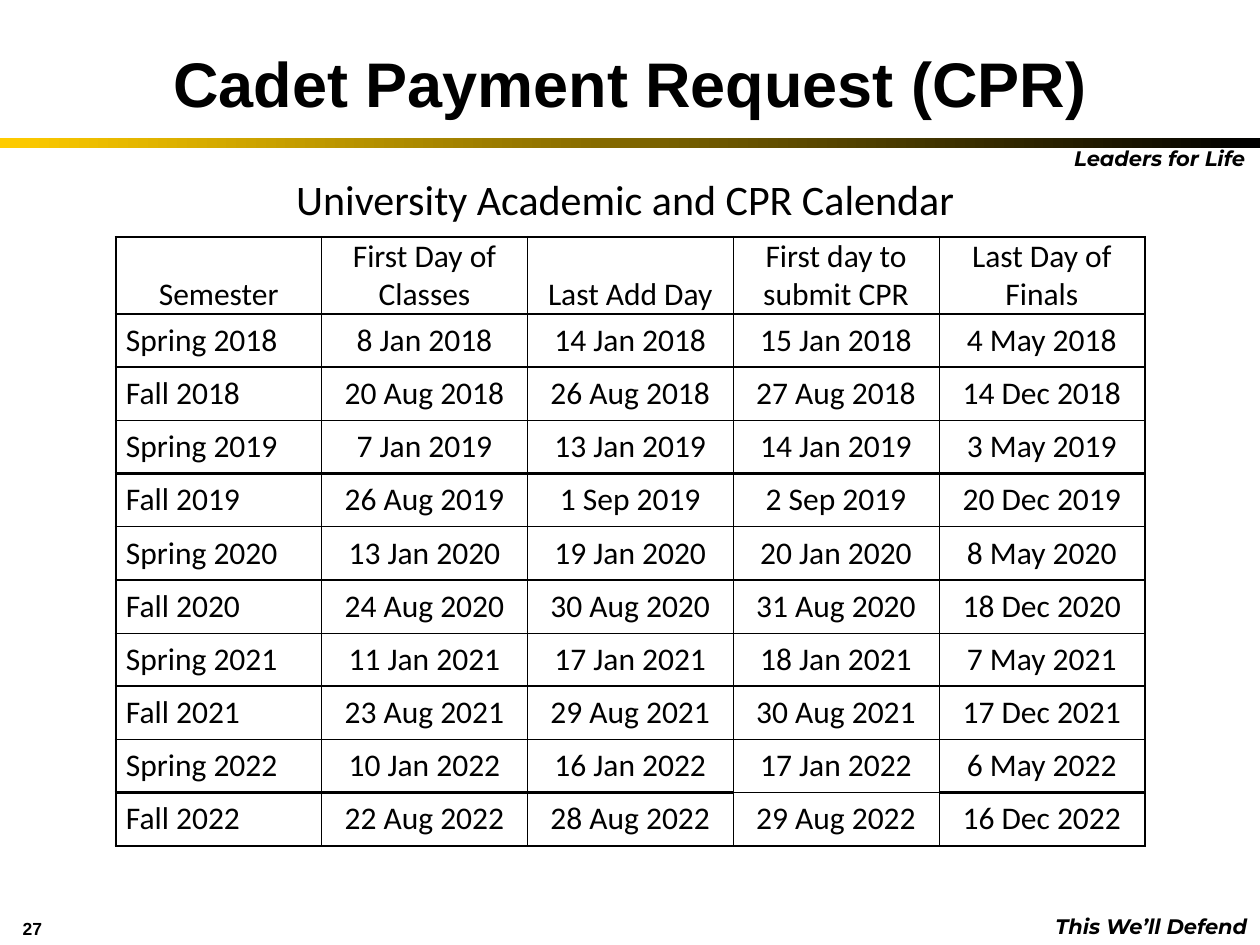
from dataclasses import dataclass

from lxml.etree import SubElement
from pptx import Presentation
from pptx.dml.color import RGBColor as RGB
from pptx.enum.shapes import MSO_SHAPE as Shape
from pptx.enum.text import MSO_ANCHOR as Anchor, MSO_AUTO_SIZE as AutoSize, PP_ALIGN as Align
from pptx.oxml.ns import qn
from pptx.util import Pt


@dataclass(frozen=True)
class Theme:
    ink: RGB = RGB(0, 0, 0)
    gold: RGB = RGB(0xFF, 0xCC, 0x00)
    amber: RGB = RGB(0xFF, 0xC0, 0x00)
    heading: str = "Arial"
    body: str = "Calibri"
    motto: str = "Montserrat"
    title_size: float = 36
    subtitle_size: float = 24
    table_size: float = 18
    motto_size: float = 12
    number_size: float = 10
    thick: float = 1.5
    thin: float = 0.5
    outline: float = 0.75


@dataclass(frozen=True)
class Style:
    font: str
    size: float
    bold: bool = False
    italic: bool = False
    outline: RGB | None = None


@dataclass(frozen=True)
class Label:
    text: str
    box: tuple[float, float, float, float]
    style: Style
    align: Align = Align.LEFT
    anchor: Anchor = Anchor.TOP
    wrap: bool = True


THEME = Theme()
TABLE_STYLE = Style(THEME.body, THEME.table_size)
TITLE = Label("Cadet Payment Request (CPR)", (36, 21.6, 648, 50.4),
              Style(THEME.heading, THEME.title_size, True), Align.CENTER, Anchor.MIDDLE)
LABELS = [
    Label("27", (5.8, 516.2, 66.2, 23.8),
          Style(THEME.heading, THEME.number_size, True), anchor=Anchor.BOTTOM),
    Label("This We’ll Defend", (591.1, 518.4, 128.9, 21.6),
          Style(THEME.motto, THEME.motto_size, True, True, THEME.amber), Align.RIGHT, wrap=False),
    Label("Leaders for Life", (599.8, 79.9, 118.8, 21.6),
          Style(THEME.motto, THEME.motto_size, True, True, THEME.gold), Align.RIGHT, wrap=False),
    Label("University Academic and CPR Calendar ", (72, 95.8, 576, 36),
          Style(THEME.body, THEME.subtitle_size), Align.CENTER),
]
CALENDAR = [
    ("Semester", "First Day of Classes", "Last Add Day", "First day to submit CPR",
     "Last Day of Finals"),
    ("Spring 2018", "8 Jan 2018", "14 Jan 2018", "15 Jan 2018", "4 May 2018"),
    ("Fall 2018", "20 Aug 2018", "26 Aug 2018", "27 Aug 2018", "14 Dec 2018"),
    ("Spring 2019", "7 Jan 2019", "13 Jan 2019", "14 Jan 2019", "3 May 2019"),
    ("Fall 2019", "26 Aug 2019", "1 Sep 2019", "2 Sep 2019", "20 Dec 2019"),
    ("Spring 2020", "13 Jan 2020", "19 Jan 2020", "20 Jan 2020", "8 May 2020"),
    ("Fall 2020", "24 Aug 2020", "30 Aug 2020", "31 Aug 2020", "18 Dec 2020"),
    ("Spring 2021", "11 Jan 2021", "17 Jan 2021", "18 Jan 2021", "7 May 2021"),
    ("Fall 2021", "23 Aug 2021", "29 Aug 2021", "30 Aug 2021", "17 Dec 2021"),
    ("Spring 2022", "10 Jan 2022", "16 Jan 2022", "17 Jan 2022", "6 May 2022"),
    ("Fall 2022", "22 Aug 2022", "28 Aug 2022", "29 Aug 2022", "16 Dec 2022"),
]
TABLE_LEFT, TABLE_TOP = 66.2, 135.4
COLUMN_WIDTH, HEADER_HEIGHT, ROW_HEIGHT = 117.6, 38.2, 30.4
SEMESTER_INSET = 5.8


def add_line(parent, tag: str, width: float, color: RGB, index: int) -> None:
    ln = SubElement(parent, qn(tag), w=str(Pt(width)))
    parent.insert(index, ln)
    SubElement(SubElement(ln, qn("a:solidFill")), qn("a:srgbClr"), val=str(color))


def write(tf, text: str, style: Style, align: Align) -> None:
    p = tf.paragraphs[0]
    p.alignment = align
    r = p.add_run()
    r.text = text
    r.font.name, r.font.size = style.font, Pt(style.size)
    r.font.bold, r.font.italic = style.bold, style.italic
    r.font.color.rgb = THEME.ink
    if style.outline is not None:
        add_line(r.font._element, "a:ln", THEME.outline, style.outline, 0)


def fill_label(sp, label: Label) -> None:
    sp.left, sp.top, sp.width, sp.height = map(Pt, label.box)
    tf = sp.text_frame
    tf.auto_size = AutoSize.NONE
    tf.word_wrap = label.wrap
    tf.vertical_anchor = label.anchor
    write(tf, label.text, label.style, label.align)


def add_band(s) -> None:
    sp = s.shapes.add_shape(Shape.RECTANGLE, 0, Pt(78.8), Pt(720), Pt(5.8))
    sp.rotation = 180
    sp.shadow.inherit = False
    sp.line.fill.background()
    sp.fill.gradient()
    sp.fill.gradient_angle = 0
    for stop, position, color in zip(sp.fill.gradient_stops, (0, 1), (THEME.ink, THEME.gold)):
        stop.position = position
        stop.color.rgb = color


def rule_width(line: int, column: int) -> float:
    last = len(CALENDAR)
    between_years = line % 2 == 1 and 1 < line < last
    lighter_gap = (line, column) == (last - 1, 3)
    return THEME.thin if between_years or lighter_gap else THEME.thick


def side_width(line: int) -> float:
    return THEME.thick if line in (0, len(CALENDAR[0])) else THEME.thin


def fill_cell(cell, row: int, column: int, text: str) -> None:
    is_semester = row > 0 and column == 0
    cell.margin_left = Pt(SEMESTER_INSET if is_semester else 0)
    cell.margin_right = cell.margin_top = cell.margin_bottom = 0
    cell.vertical_anchor = Anchor.MIDDLE if row else Anchor.BOTTOM
    write(cell.text_frame, text, TABLE_STYLE, Align.LEFT if is_semester else Align.CENTER)
    borders = {"a:lnL": side_width(column), "a:lnR": side_width(column + 1),
               "a:lnT": rule_width(row, column), "a:lnB": rule_width(row + 1, column)}
    tc_pr = cell._tc.get_or_add_tcPr()
    for index, (tag, width) in enumerate(borders.items()):
        add_line(tc_pr, tag, width, THEME.ink, index)
    cell.fill.background()


def add_calendar(s) -> None:
    rows, columns = len(CALENDAR), len(CALENDAR[0])
    height = HEADER_HEIGHT + (rows - 1) * ROW_HEIGHT
    table = s.shapes.add_table(rows, columns, Pt(TABLE_LEFT), Pt(TABLE_TOP),
                               Pt(columns * COLUMN_WIDTH), Pt(height)).table
    table.first_row = table.horz_banding = False
    for column in table.columns:
        column.width = Pt(COLUMN_WIDTH)
    for i, values in enumerate(CALENDAR):
        table.rows[i].height = Pt(ROW_HEIGHT if i else HEADER_HEIGHT)
        for j, text in enumerate(values):
            fill_cell(table.cell(i, j), i, j, text)


def main() -> None:
    """Build the cadet payment calendar slide."""
    prs = Presentation()
    prs.slide_width, prs.slide_height = Pt(720), Pt(540)
    s = prs.slides.add_slide(prs.slide_layouts[5])
    fill_label(s.shapes.title, TITLE)
    add_band(s)
    for label in LABELS:
        fill_label(s.shapes.add_textbox(0, 0, 0, 0), label)
    add_calendar(s)
    prs.save("out.pptx")


if __name__ == "__main__":
    main()
